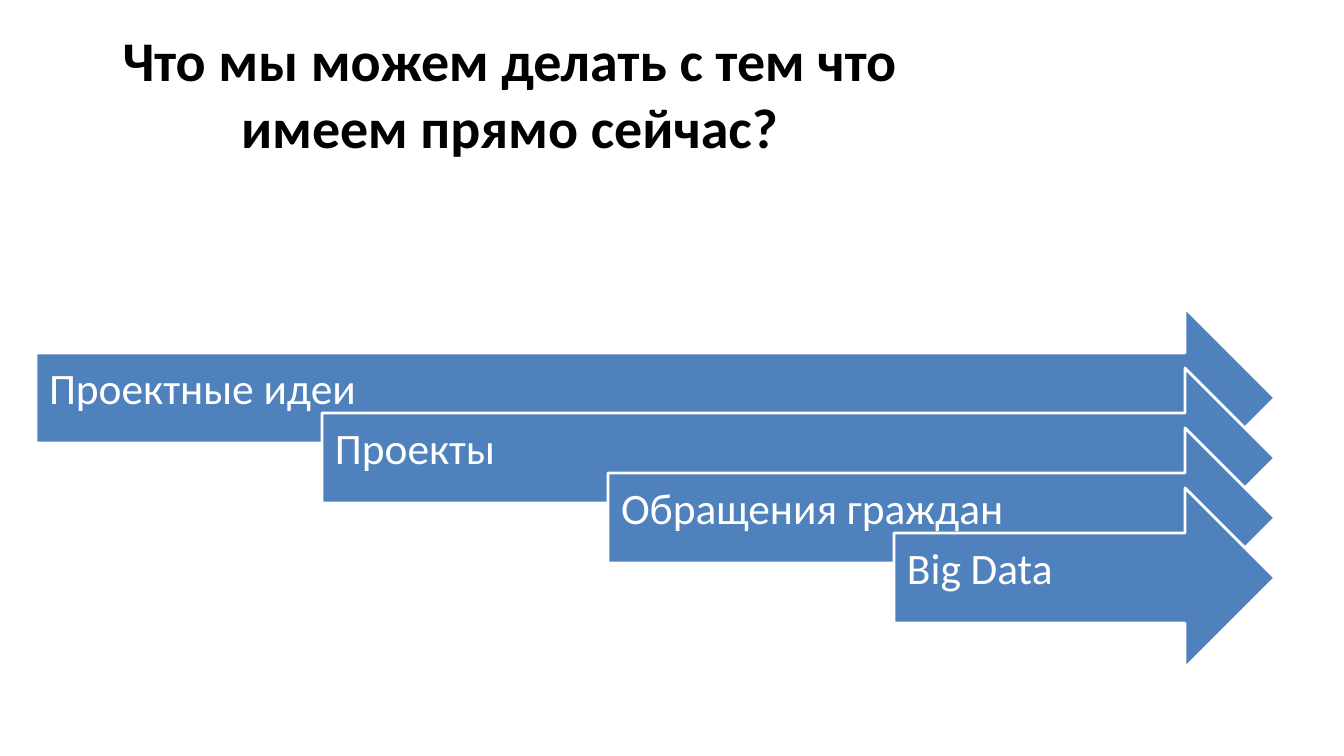
from pptx import Presentation
from pptx.dml.color import RGBColor
from pptx.enum.shapes import MSO_SHAPE
from pptx.enum.text import MSO_ANCHOR, MSO_AUTO_SIZE, PP_ALIGN
from pptx.util import Pt

RIGHT_ARROW = MSO_SHAPE.RIGHT_ARROW
MIDDLE = MSO_ANCHOR.MIDDLE
NO_AUTOFIT = MSO_AUTO_SIZE.NONE
LEFT, CENTER = PP_ALIGN.LEFT, PP_ALIGN.CENTER
TITLE_ONLY = 5

EMU_PER_PX = 914400 / 100.8
FONT = "Calibri"
COLORS = {"text": "000000", "arrow": "4F81BD", "light": "FFFFFF"}

TITLE = "Что мы можем делать с тем что имеем прямо сейчас?"
SOURCES = ["Проектные идеи", "Проекты", "Обращения граждан", "Big Data"]
ARROWS_LEFT, ARROWS_TOP, ARROWS_RIGHT = 36, 308, 1275
ARROW_HEIGHT = 180
STEP_X, STEP_Y = 286, 60


def px(length):
    return round(length * EMU_PER_PX)


def color(name):
    return RGBColor.from_string(COLORS[name])


def write(shape, text, size, fill="text", bold=False, align=LEFT,
          line_spacing=1.0, margins=(10, 5, 10, 5)):
    frame = shape.text_frame
    frame.word_wrap = True
    frame.auto_size = NO_AUTOFIT
    frame.vertical_anchor = MIDDLE
    (frame.margin_left, frame.margin_top,
     frame.margin_right, frame.margin_bottom) = map(px, margins)
    paragraph = frame.paragraphs[0]
    paragraph.alignment = align
    paragraph.line_spacing = line_spacing
    run = paragraph.add_run()
    run.text = text
    run.font.name = FONT
    run.font.size = Pt(size)
    run.font.bold = bold
    run.font.color.rgb = color(fill)


class SlideBuilder:
    def __init__(self, presentation):
        self.slide = presentation.slides.add_slide(
            presentation.slide_layouts[TITLE_ONLY])

    def title(self, text, left, top, width, height):
        shape = self.slide.shapes.title
        shape.left, shape.top = px(left), px(top)
        shape.width, shape.height = px(width), px(height)
        write(shape, text, size=40, bold=True, align=CENTER)

    def arrow(self, text, left, top, width, height):
        shape = self.slide.shapes.add_shape(
            RIGHT_ARROW, px(left), px(top), px(width), px(height))
        shape.shadow.inherit = False
        shape.fill.solid()
        shape.fill.fore_color.rgb = color("arrow")
        shape.line.color.rgb = color("light")
        shape.line.width = Pt(2)
        write(shape, text, size=31, fill="light", line_spacing=0.9,
              margins=(13, 13, 28, 28))


def main():
    presentation = Presentation()
    presentation.slide_width = px(1344)
    presentation.slide_height = px(756)
    builder = SlideBuilder(presentation)
    builder.title(TITLE, 68, 30, 883, 126)
    for index, source in enumerate(SOURCES):
        left = ARROWS_LEFT + index * STEP_X
        top = ARROWS_TOP + index * STEP_Y
        builder.arrow(source, left, top, ARROWS_RIGHT - left, ARROW_HEIGHT)
    presentation.save("out.pptx")


if __name__ == "__main__":
    main()
